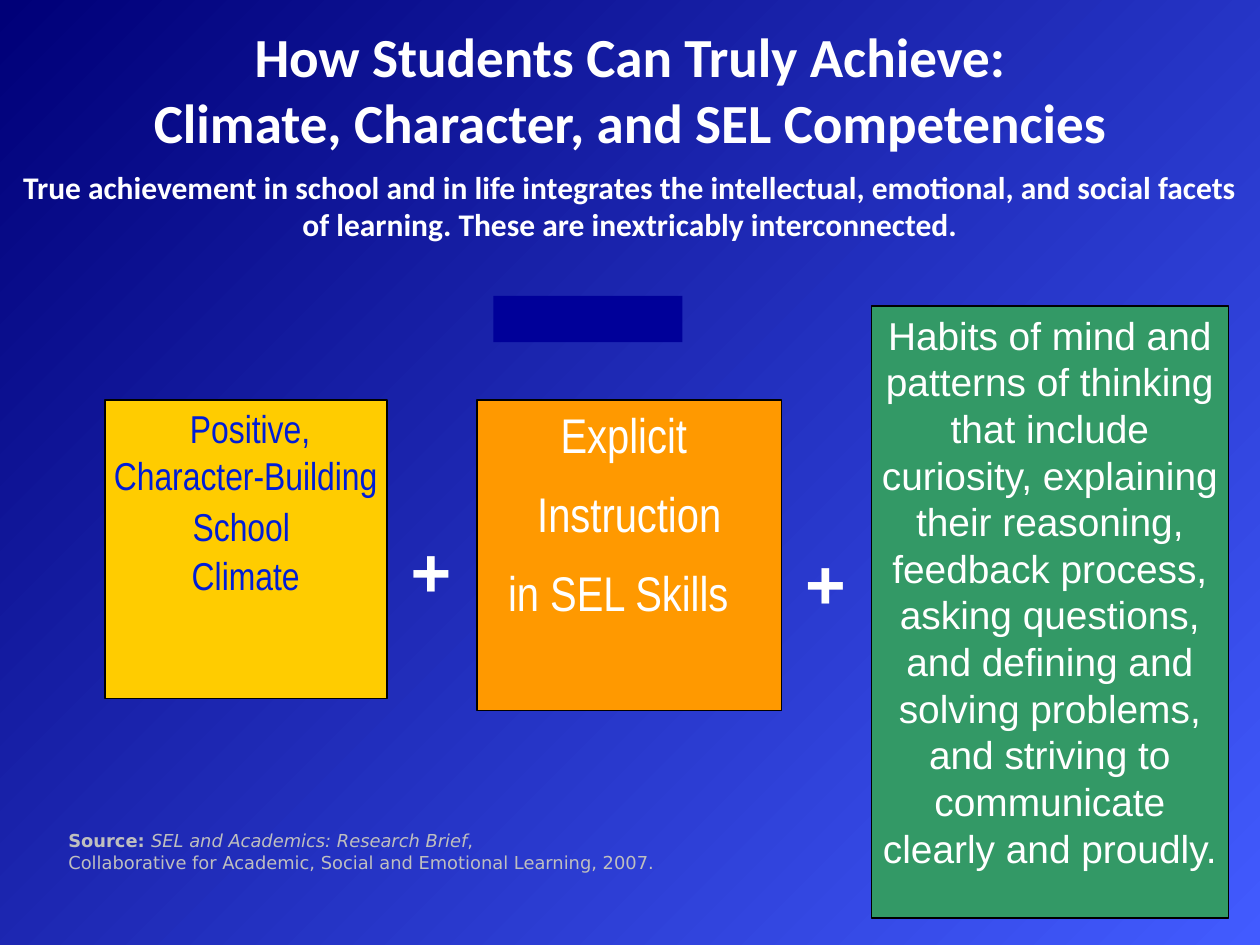
"""Build the slide on climate, character and SEL competencies."""
from lxml import etree
from pptx import Presentation
from pptx.dml.color import RGBColor
from pptx.enum import shapes, text
from pptx.util import Pt


class Theme:
    dark, light = "000078", "425BFF"
    white, black, grey = "FFFFFF", "000000", "BFBFBF"
    navy, blue = "000099", "001DD6"
    gold, orange, green = "FFCC00", "FF9900", "339966"
    head, lead, card, large, plus, note = 31.5, 18, 22.2, 27.8, 39.8, 10.2
    sans, narrow, title, source = "Arial", "Arial Narrow", "Calibri", "DejaVu Sans"


def place(shape, box):
    shape.left, shape.top, shape.width, shape.height = map(Pt, box)


def write(shape, lines, face, size, color, bold=False, align="CENTER", pad=(7.2, 3.6), anchor="TOP"):
    frame = shape.text_frame
    frame.word_wrap = True
    frame.auto_size = text.MSO_AUTO_SIZE.NONE
    frame.vertical_anchor = text.MSO_ANCHOR[anchor]
    frame.margin_left = frame.margin_right = Pt(pad[0])
    frame.margin_top = frame.margin_bottom = Pt(pad[1])
    frame.text = "\n".join(lines)
    for para in frame.paragraphs:
        para.alignment = text.PP_ALIGN[align]
        para.space_before = Pt(0)
        font = para.font
        font.name, font.size, font.bold = face, Pt(size), bold
        font.color.rgb = RGBColor.from_string(color)
    return frame.paragraphs


deck = Presentation()
deck.slide_width, deck.slide_height = Pt(720), Pt(540)
slide = deck.slides.add_slide(deck.slide_layouts[1])
items = slide.shapes

fill = slide.background.fill
fill.gradient()
fill.gradient_angle = 315
for stop, color in zip(fill.gradient_stops, (Theme.dark, Theme.light)):
    stop.color.rgb = RGBColor.from_string(color)

body = slide.placeholders[1]
place(body, (0, 92.2, 720, 65.5))
lead = write(body, [
    "True achievement in school and in life integrates the intellectual, emotional, "
    "and social facets of learning. These are inextricably interconnected."
], Theme.title, Theme.lead, Theme.white, True)[0]
props = lead._p.get_or_add_pPr()
props.set("marL", "0")
props.set("indent", "0")
bullet = etree.Element("{http://schemas.openxmlformats.org/drawingml/2006/main}buNone")
props.find("{*}defRPr").addprevious(bullet)

place(items.title, (0, 3.2, 720, 95))
write(items.title, ["How Students Can Truly Achieve:", "Climate, Character, and SEL Competencies"],
      Theme.title, Theme.head, Theme.white, True, anchor="MIDDLE")

bar = items.add_shape(shapes.MSO_SHAPE.RECTANGLE, *map(Pt, (282, 169, 108, 26.5)))
bar.shadow.inherit = False
bar.fill.solid()
bar.fill.fore_color.rgb = RGBColor.from_string(Theme.navy)
bar.line.fill.background()

habits = (
    "Habits of mind and patterns of thinking that include curiosity, explaining their "
    "reasoning, feedback process, asking questions, and defining and solving problems, "
    "and striving to communicate clearly and proudly."
)
cards = [
    ((59.8, 228.6, 161.2, 170.5), Theme.gold,
     [" Positive, Character-Building", "School ", "Climate"],
     Theme.narrow, Theme.card, Theme.blue),
    ((272.7, 228.4, 174, 177.6), Theme.orange,
     ["Explicit ", "Instruction", "in SEL Skills"],
     Theme.narrow, Theme.large, Theme.white),
    ((498, 175, 204, 349.8), Theme.green, [habits],
     Theme.sans, Theme.card, Theme.white),
]
paras = []
for box, color, lines, face, size, ink in cards:
    card = items.add_shape(shapes.MSO_SHAPE.RECTANGLE, *map(Pt, box))
    card.shadow.inherit = False
    card.fill.solid()
    card.fill.fore_color.rgb = RGBColor.from_string(color)
    card.line.color.rgb = RGBColor.from_string(Theme.black)
    card.line.width = Pt(1)
    paras.append(write(card, lines, face, size, ink, pad=(2.9, 2.9)))

climate, skills, habit = paras
climate[0].space_after = Pt(6)
for para in climate[1:]:
    para.line_spacing = 0.6
    para.space_before = para.space_after = Pt(6)
for para in skills[1:]:
    para.space_before = Pt(11.9)
skills[2]._p.get_or_add_pPr().set("marR", str(Pt(12.6)))

for box in ((227.5, 298, 32.4, 55.4), (453, 305, 45, 55.4)):
    sign = items.add_textbox(*map(Pt, box))
    write(sign, ["+"], Theme.sans, Theme.plus, Theme.white, True, "LEFT")

note = items.add_textbox(*map(Pt, (32, 470.6, 360, 32.4)))
first = write(note, ["", "Collaborative for Academic, Social and Emotional Learning, 2007."],
              Theme.source, Theme.note, Theme.grey, align="LEFT")[0]
for words, bold, slant in (("Source: ", True, False),
                           ("SEL and Academics: Research Brief", False, True),
                           (",", False, False)):
    run = first.add_run()
    run.text = words
    run.font.bold, run.font.italic = bold, slant

deck.save("out.pptx")
